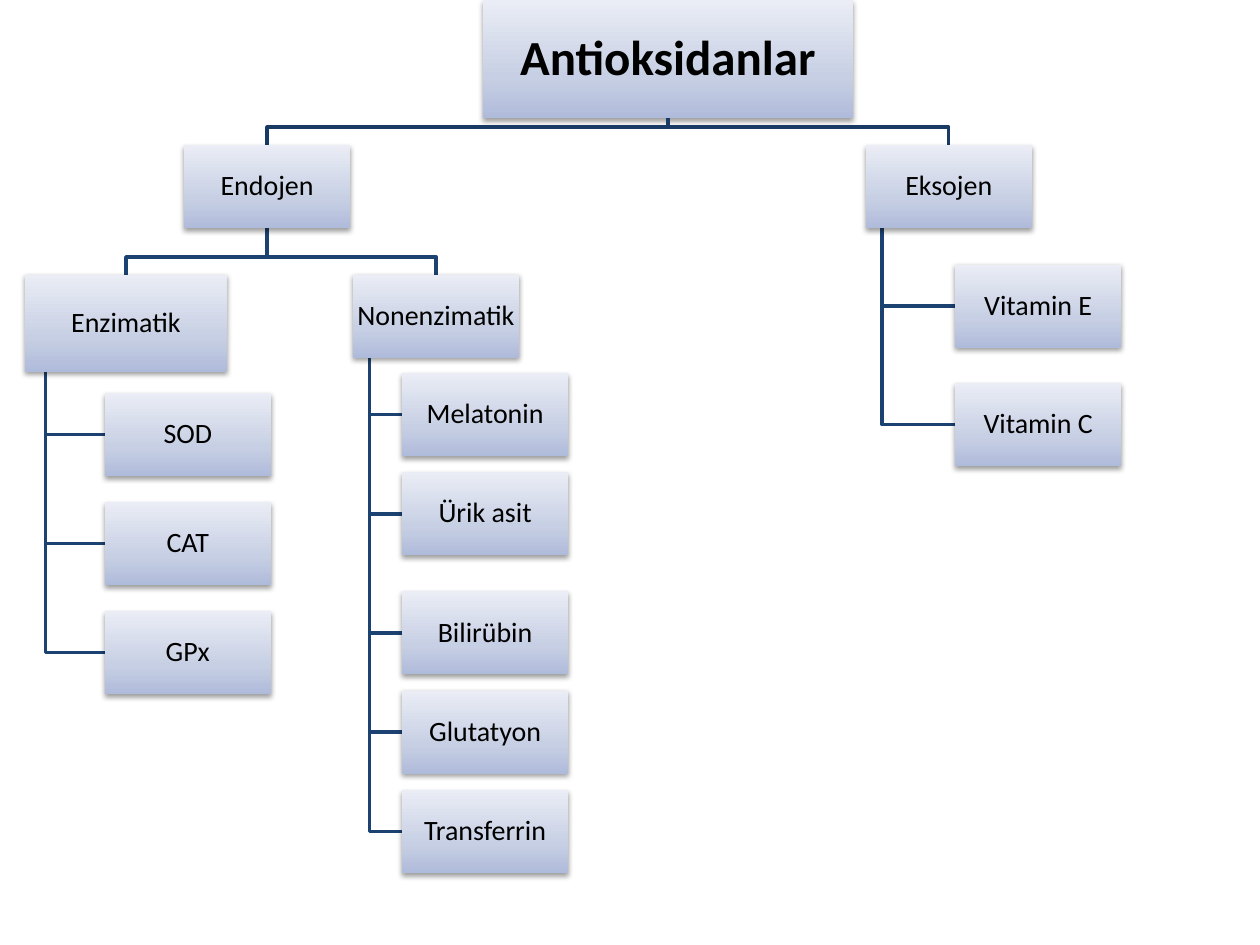
from lxml.etree import fromstring
from pptx import Presentation
from pptx.dml.color import RGBColor as RGB
from pptx.enum.shapes import MSO_SHAPE as Kind
from pptx.enum.text import MSO_ANCHOR as Anchor, MSO_AUTO_SIZE as Auto, PP_ALIGN as Align
from pptx.util import Inches, Pt

BLACK = RGB(0x00, 0x00, 0x00)
NAVY = RGB(0x19, 0x3A, 0x64)
BLUE = RGB(0x1C, 0x42, 0x71)
STOPS = [(0, RGB(0xAF, 0xBB, 0xDA)), (35, RGB(0xC7, 0xCF, 0xE4)),
         (100, RGB(0xEA, 0xED, 0xF5))]

# Sizes in inches
BOX = (1.32, 0.66)
ROWS = {"root": 0, "kind": 1.15, "type": 2.18}
BUS = 0.14      # height of a bus line above its children
TRUNK = 0.1     # place of a trunk, as a share of its parent's width

# Name: (left, top, size)
HEADS = {
    "Antioksidanlar": (3.83, ROWS["root"], (2.94, 0.94)),
    "Endojen": (1.46, ROWS["kind"], BOX),
    "Eksojen": (6.87, ROWS["kind"], BOX),
    "Enzimatik": (0.2, ROWS["type"], (1.6, 0.77)),
    "Nonenzimatik": (2.8, ROWS["type"], BOX),
}
# Parent, line colour, children joined by a bus
FORKS = [
    ("Antioksidanlar", NAVY, ["Endojen", "Eksojen"]),
    ("Endojen", BLUE, ["Enzimatik", "Nonenzimatik"]),
]
# Parent, left of the list, first top, step, {name: grid row}
LISTS = [
    ("Enzimatik", 0.83, 3.12, 0.865, {"SOD": 0, "CAT": 1, "GPx": 2}),
    ("Nonenzimatik", 3.19, 2.96, 0.788,
     {"Melatonin": 0, "Ürik asit": 1, "Bilirübin": 2.2, "Glutatyon": 3.2,
      "Transferrin": 4.2}),
    ("Eksojen", 7.58, 2.1, 0.94, {"Vitamin E": 0, "Vitamin C": 1}),
]

NS = 'xmlns:a="http://schemas.openxmlformats.org/drawingml/2006/main"'
GRAD = (f'<a:gradFill {NS} rotWithShape="1"><a:gsLst>'
        + "".join(f'<a:gs pos="{pos * 1000}"><a:srgbClr val="{tint}"/></a:gs>'
                  for pos, tint in STOPS)
        + '</a:gsLst><a:lin ang="16200000" scaled="0"/></a:gradFill>')
BARE = f'<a:ln {NS}><a:noFill/></a:ln>'
SHADE = (f'<a:effectLst {NS}><a:outerShdw blurRad="{Pt(3.1)}" dist="{Pt(1.6)}" '
         'dir="5400000" rotWithShape="0"><a:srgbClr val="000000">'
         '<a:alpha val="38000"/></a:srgbClr></a:outerShdw></a:effectLst>')


def put(obj, vals):
    for key, val in vals.items():
        setattr(obj, key, val)


def link(slide, color, pts):
    start, *rest = [(Inches(x), Inches(y)) for x, y in pts]
    pen = slide.shapes.build_freeform(*start)
    pen.add_line_segments(rest, close=False)
    line = pen.convert_to_shape()
    line.fill.background()
    line.shadow.inherit = False
    line.line.color.rgb = color
    line.line.width = Pt(2)


def dress(shape, name, place, size=16, bold=False, pad=0.01):
    left, top, (wide, high) = place
    put(shape, {"left": Inches(left), "top": Inches(top),
                "width": Inches(wide), "height": Inches(high)})
    for part in (GRAD, BARE, SHADE):
        shape._element.spPr.append(fromstring(part))
    frame = shape.text_frame
    frame.text = name
    put(frame, {"word_wrap": True, "auto_size": Auto.NONE,
                "vertical_anchor": Anchor.MIDDLE})
    put(frame, {f"margin_{side}": Inches(pad)
                for side in ("left", "top", "right", "bottom")})
    para = frame.paragraphs[0]
    put(para, {"alignment": Align.CENTER, "line_spacing": 0.9})
    font = para.runs[0].font
    put(font, {"name": "Calibri", "size": Pt(size), "bold": bold})
    font.color.rgb = BLACK


def main():
    deck = Presentation()
    put(deck, {"slide_width": Inches(10), "slide_height": Inches(7.5)})
    slide = deck.slides.add_slide(deck.slide_layouts[5])
    boxes = dict(HEADS)

    # Trunks with a branch to each list item
    for head, left, first, step, items in LISTS:
        x, y, (wide, high) = HEADS[head]
        trunk = x + TRUNK * wide
        for name, row in items.items():
            top = first + row * step
            boxes[name] = (left, top, BOX)
            mid = top + BOX[1] / 2
            link(slide, BLUE, [(trunk, y + high), (trunk, mid), (left, mid)])

    # Bus lines from a parent down to its children
    for head, color, kids in FORKS:
        x, y, (wide, high) = HEADS[head]
        mid = x + wide / 2
        for kid in kids:
            left, top, size = HEADS[kid]
            end = left + size[0] / 2
            link(slide, color, [(mid, y + high), (mid, top - BUS),
                                (end, top - BUS), (end, top)])

    # Title, then all other boxes
    root, *rest = boxes
    dress(slide.shapes.title, root, boxes[root], size=28, bold=True, pad=0.02)
    for name in rest:
        dress(slide.shapes.add_shape(Kind.RECTANGLE, 0, 0, 0, 0), name, boxes[name])

    deck.save("out.pptx")


if __name__ == "__main__":
    main()
